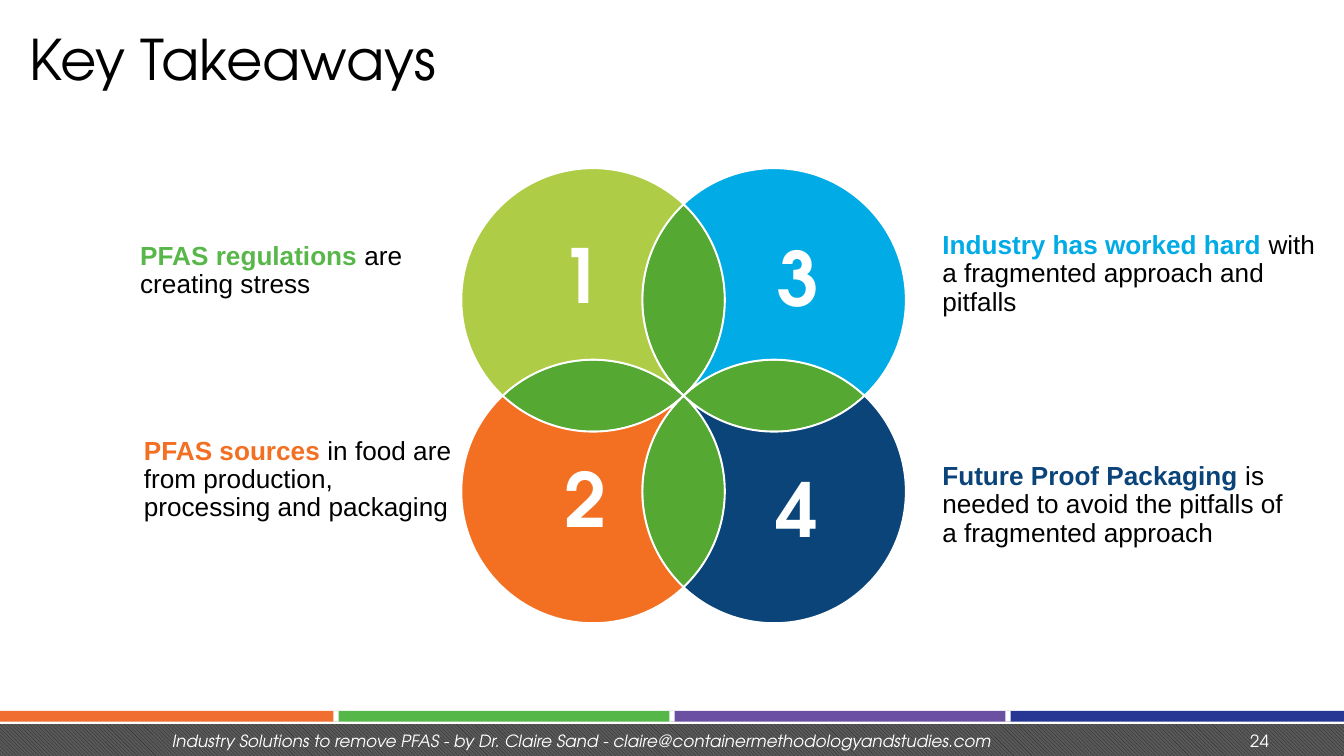
import math

import lxml.etree
import pptx
import pptx.dml.color
import pptx.enum.dml
import pptx.enum.shapes
import pptx.enum.text
import pptx.oxml.ns
import pptx.util

Cm = pptx.util.Cm
Pt = pptx.util.Pt
RGBColor = pptx.dml.color.RGBColor
ANCHOR = pptx.enum.text.MSO_ANCHOR
ALIGN = pptx.enum.text.PP_ALIGN
qn = pptx.oxml.ns.qn

BLACK = RGBColor(0x00, 0x00, 0x00)
WHITE = RGBColor(0xFF, 0xFF, 0xFF)
LENS_GREEN = RGBColor(0x55, 0xA9, 0x32)
LIME = RGBColor(0xAE, 0xCC, 0x45)
GREEN = RGBColor(0x57, 0xB7, 0x48)
ORANGE = RGBColor(0xF3, 0x6F, 0x21)
SKY = RGBColor(0x00, 0xAB, 0xE6)
NAVY = RGBColor(0x0A, 0x44, 0x79)
HATCH_DARK = RGBColor(0x26, 0x26, 0x26)
HATCH_LIGHT = RGBColor(0x59, 0x59, 0x59)
STRIPE_COLORS = [
    RGBColor(0xF0, 0x6F, 0x30),
    RGBColor(0x56, 0xB7, 0x49),
    RGBColor(0x6A, 0x4F, 0xA2),
    RGBColor(0x26, 0x38, 0x94),
]

HEADING_FONT = "TeX Gyre Adventor"
BODY_FONT = "Arial"
TITLE = "Key Takeaways"
FOOTER = ("Industry Solutions to remove PFAS - by Dr. Claire Sand - "
          "claire@containermethodologyandstudies.com")
PAGE_NUMBER = "24"

# number, column side, row side, petal colour, number position, lead, rest, lead colour, text box
TAKEAWAYS = [
    ("1", -1, -1, LIME, (10.34, 4.2), "PFAS regulations ",
     "are creating stress", GREEN, (2.4, 4.47, 6.32, 2.69)),
    ("2", -1, 1, ORANGE, (10.41, 8.43), "PFAS sources ",
     "in food are from production, processing and packaging",
     ORANGE, (2.47, 8.15, 6.32, 4.37)),
    ("3", 1, -1, SKY, (14.45, 4.26), "Industry has worked hard ",
     "with a fragmented approach and pitfalls", SKY, (17.56, 4.26, 7.62, 4.37)),
    ("4", 1, 1, NAVY, (14.43, 8.63), "Future Proof Packaging ",
     "is needed to avoid the pitfalls of a fragmented approach",
     NAVY, (17.56, 8.63, 7.24, 4.37)),
]

WIDTH, HEIGHT = 25.4, 14.29
CENTER_X, CENTER_Y = 12.92, 7.48
HALF_X, HALF_Y = 1.71, 1.81
RADIUS = math.hypot(HALF_X, HALF_Y)
MEET = math.degrees(math.atan2(HALF_Y, HALF_X))
STRIPE_TOP, STRIPE_HEIGHT = 13.44, 0.2
FOOTER_TOP, FOOTER_HEIGHT = 13.69, 0.6
DIVIDER = 0.1


def arc(x, y, *degrees):
    points = []
    for start, end in zip(degrees, degrees[1:]):
        first, last = math.radians(start), math.radians(end)
        reach = 4 / 3 * math.tan((last - first) / 4)
        for angle, pull in ((first, reach), (last, -reach), (last, 0)):
            points.append((x + RADIUS * (math.cos(angle) - pull * math.sin(angle)),
                           y + RADIUS * (math.sin(angle) + pull * math.cos(angle))))
    return points


def add_outline(page, points, color):
    spots = [(Cm(CENTER_X + x), Cm(CENTER_Y + y)) for x, y in points]
    builder = page.shapes.build_freeform(*spots[-1], scale=1.0)
    builder.add_line_segments(spots, close=True)
    shape = builder.convert_to_shape()
    lines = list(shape.element.iter(qn("a:lnTo")))
    for i in range(0, len(lines), 3):
        curve = lxml.etree.Element(qn("a:cubicBezTo"))
        lines[i].addprevious(curve)
        for line in lines[i:i + 3]:
            curve.append(line[0])
            line.getparent().remove(line)
    shape.shadow.inherit = False
    shape.fill.solid()
    shape.fill.fore_color.rgb = color
    shape.line.color.rgb = WHITE
    shape.line.width = Pt(1)


def add_bar(page, left, top, width, height, color=None):
    bar = page.shapes.add_shape(pptx.enum.shapes.MSO_SHAPE.RECTANGLE,
                                Cm(left), Cm(top), Cm(width), Cm(height))
    bar.shadow.inherit = False
    bar.line.fill.background()
    if color is not None:
        bar.fill.solid()
        bar.fill.fore_color.rgb = color
    return bar


def add_text(page, place, pieces, size, font, anchor=ANCHOR.TOP, align=ALIGN.LEFT):
    box = page.shapes.add_textbox(*[Cm(value) for value in place])
    frame = box.text_frame
    frame.word_wrap = True
    frame.vertical_anchor = anchor
    para = frame.paragraphs[0]
    para.alignment = align
    for text, color, bold, italic in pieces:
        span = para.add_run()
        span.text = text
        span.font.size = Pt(size)
        span.font.name = font
        span.font.color.rgb = color
        span.font.bold = bold
        span.font.italic = italic
    return frame


def add_footer(page):
    base = add_bar(page, 0, FOOTER_TOP, WIDTH, FOOTER_HEIGHT)
    base.fill.patterned()
    base.fill.pattern = pptx.enum.dml.MSO_PATTERN.DARK_DOWNWARD_DIAGONAL
    base.fill.fore_color.rgb = HATCH_DARK
    base.fill.back_color.rgb = HATCH_LIGHT
    stripe = WIDTH / len(STRIPE_COLORS)
    for i, color in enumerate(STRIPE_COLORS):
        add_bar(page, i * stripe, STRIPE_TOP, stripe, STRIPE_HEIGHT, color)
    for i in range(1, len(STRIPE_COLORS)):
        add_bar(page, i * stripe - DIVIDER / 2, STRIPE_TOP, DIVIDER, STRIPE_HEIGHT, WHITE)
    add_text(page, (0.56, FOOTER_TOP, 20.85, 0.51), [(FOOTER, WHITE, False, True)],
             9, HEADING_FONT, align=ALIGN.CENTER)
    add_text(page, (21.51, FOOTER_TOP, 2.72, 0.51), [(PAGE_NUMBER, WHITE, False, False)],
             9, HEADING_FONT, align=ALIGN.RIGHT)


def add_circles(page):
    petal = (arc(HALF_X, HALF_Y, -MEET, 0, 90, 180 - MEET)
             + arc(-HALF_X, HALF_Y, MEET, 0, -MEET)
             + arc(HALF_X, -HALF_Y, 180 - MEET, 90, MEET))
    upright = arc(-HALF_X, 0, -MEET, 0, MEET) + arc(HALF_X, 0, 180 - MEET, 180, 180 + MEET)
    level = arc(0, -HALF_Y, MEET, 90, 180 - MEET) + arc(0, HALF_Y, 180 + MEET, 270, 360 - MEET)
    for side in (-1, 1):
        add_outline(page, [(x, y + side * HALF_Y) for x, y in upright], LENS_GREEN)
        add_outline(page, [(x + side * HALF_X, y) for x, y in level], LENS_GREEN)
    for _, column, row, color, *_ in TAKEAWAYS:
        add_outline(page, [(column * x, row * y) for x, y in petal], color)


def main():
    deck = pptx.Presentation()
    deck.slide_width, deck.slide_height = Cm(WIDTH), Cm(HEIGHT)
    page = deck.slides.add_slide(deck.slide_layouts[6])
    add_footer(page)
    title = add_text(page, (0.56, 0.42, 22.17, 1.35), [(TITLE, BLACK, False, False)],
                     30, HEADING_FONT, ANCHOR.MIDDLE)
    title.margin_left = title.margin_right = title.margin_top = title.margin_bottom = 0
    add_circles(page)
    for number, _, _, _, spot, lead, rest, color, place in TAKEAWAYS:
        frame = add_text(page, place, [(lead, color, True, False), (rest, BLACK, False, False)],
                         14, BODY_FONT)
        frame.paragraphs[0].line_spacing = 0.9
        frame.paragraphs[0].space_before = Pt(10)
        add_text(page, (*spot, 2.57, 1.96), [(number, WHITE, True, False)], 40, HEADING_FONT)
    deck.save("out.pptx")


if __name__ == "__main__":
    main()
